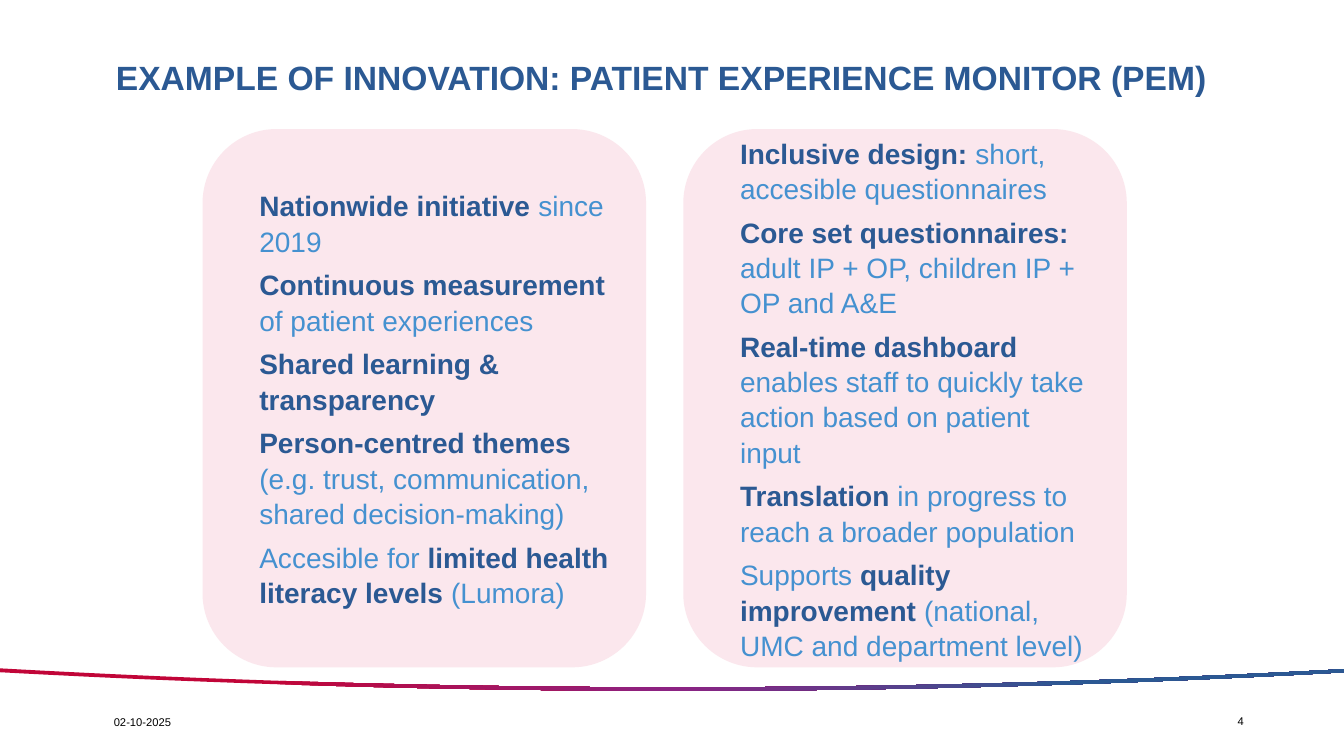
from dataclasses import dataclass

from lxml.etree import SubElement
from pptx import Presentation
from pptx.dml.color import RGBColor
from pptx.enum.text import MSO_ANCHOR, PP_ALIGN
from pptx.enum.shapes import MSO_SHAPE
from pptx.oxml.ns import qn
from pptx.util import Pt


@dataclass(frozen=True)
class Theme:
    font: str = "Arial"
    navy: str = "2B5993"
    sky: str = "4591D0"
    panel: str = "FBE7ED"
    black: str = "000000"
    title_size: int = 24
    body_size: int = 20
    footer_size: int = 8
    wave_stops: tuple = ((20, "C10538"), (50, "8C2383"), (80, "2B5993"))


THEME = Theme()
SLIDE_WIDTH, SLIDE_HEIGHT = 960, 540
PANEL_TOP, PANEL_WIDTH, PANEL_HEIGHT = 92.2, 316.8, 384.5
PANEL_LEFT, PANEL_STEP = 144.7, 343.4
WAVE_STEPS = 60
WAVE_LOWER = (480.2, 497.5, 498.2, 480.2)
WAVE_UPPER = (477.4, 495.4, 495.4, 478)

# Each paragraph is a list of (text, is_key_phrase) runs.
PANELS = [
    [
        [("Nationwide initiative ", True), ("since 2019", False)],
        [("Continuous measurement ", True), ("of patient experiences", False)],
        [("Shared learning & transparency", True)],
        [("Person-centred themes ", True),
         ("(e.g. trust, communication, shared decision-making)", False)],
        [("Accesible for ", False), ("limited health literacy levels", True),
         (" (Lumora)", False)],
    ],
    [
        [("Inclusive design: ", True), ("short, accesible questionnaires", False)],
        [("Core set questionnaires: ", True),
         ("adult IP + OP, children IP + OP and A&E", False)],
        [("Real-time dashboard ", True),
         ("enables staff to quickly take action based on patient input", False)],
        [("Translation", True), (" in progress to reach a broader population", False)],
        [("Supports ", False), ("quality improvement ", True),
         ("(national, UMC and department level)", False)],
    ],
]


def style_font(font, size, color, bold=False):
    font.name = THEME.font
    font.size = Pt(size)
    font.bold = bold
    font.color.rgb = RGBColor.from_string(color)


def add_label(slide, text, left, top, width, height, size, color, bold=False):
    box = slide.shapes.add_textbox(Pt(left), Pt(top), Pt(width), Pt(height))
    box.text_frame.word_wrap = True
    box.text_frame.text = text
    style_font(box.text_frame.paragraphs[0].runs[0].font, size, color, bold)
    return box


def add_title(slide, text):
    box = add_label(slide, text, 82.8, 28.1, 822.2, 56.9,
                    THEME.title_size, THEME.navy, bold=True)
    frame = box.text_frame
    frame.vertical_anchor = MSO_ANCHOR.MIDDLE
    frame.margin_left = frame.margin_right = frame.margin_top = frame.margin_bottom = 0
    frame.paragraphs[0].line_spacing = 0.9


def add_panel(slide, left, paragraphs):
    panel = slide.shapes.add_shape(MSO_SHAPE.ROUNDED_RECTANGLE, Pt(left), Pt(PANEL_TOP),
                                   Pt(PANEL_WIDTH), Pt(PANEL_HEIGHT))
    panel.shadow.inherit = False
    panel.fill.solid()
    panel.fill.fore_color.rgb = RGBColor.from_string(THEME.panel)
    panel.line.fill.background()
    frame = panel.text_frame
    frame.word_wrap = True
    frame.vertical_anchor = MSO_ANCHOR.MIDDLE
    for index, runs in enumerate(paragraphs):
        para = frame.add_paragraph() if index else frame.paragraphs[0]
        para.level = 1
        para.alignment = PP_ALIGN.LEFT
        para.line_spacing = 1.05
        para.space_before = Pt(6 if index else 0)
        properties = para._p.get_or_add_pPr()
        properties.set("marL", str(Pt(18)))
        properties.set("indent", "0")
        for text, is_key in runs:
            span = para.add_run()
            span.text = text
            style_font(span.font, THEME.body_size,
                       THEME.navy if is_key else THEME.sky, is_key)


def curve_points(heights):
    """Sample a cubic curve whose control points are evenly spaced across the slide."""
    first, second, third, last = heights
    points = []
    for step in range(WAVE_STEPS + 1):
        t = step / WAVE_STEPS
        u = 1 - t
        y = u**3 * first + 3 * u * u * t * second + 3 * u * t * t * third + t**3 * last
        points.append((Pt(SLIDE_WIDTH * t), Pt(y)))
    return points


def add_wave(slide):
    outline = curve_points(WAVE_LOWER) + curve_points(WAVE_UPPER)[::-1]
    builder = slide.shapes.build_freeform(*outline[0])
    builder.add_line_segments(outline[1:], close=True)
    wave = builder.convert_to_shape()
    wave.shadow.inherit = False
    wave.line.fill.background()
    wave.fill.gradient()
    wave.fill.gradient_angle = 0
    stops = wave._element.spPr.find(f"{qn('a:gradFill')}/{qn('a:gsLst')}")
    for stop in list(stops):
        stops.remove(stop)
    for percent, color in THEME.wave_stops:
        stop = SubElement(stops, qn("a:gs"), pos=str(percent * 1000))
        SubElement(stop, qn("a:srgbClr"), val=color)


def main():
    deck = Presentation()
    deck.slide_width, deck.slide_height = Pt(SLIDE_WIDTH), Pt(SLIDE_HEIGHT)
    slide = deck.slides.add_slide(deck.slide_layouts[6])
    add_wave(slide)
    add_title(slide, "EXAMPLE OF INNOVATION: PATIENT EXPERIENCE MONITOR (PEM)")
    add_label(slide, "02-10-2025", 74.2, 507.6, 141.8, 17.3,
              THEME.footer_size, THEME.black)
    add_label(slide, "4", 877, 506.9, 41, 17.3, THEME.footer_size, THEME.black)
    for index, paragraphs in enumerate(PANELS):
        add_panel(slide, PANEL_LEFT + index * PANEL_STEP, paragraphs)
    deck.save("out.pptx")


if __name__ == "__main__":
    main()
